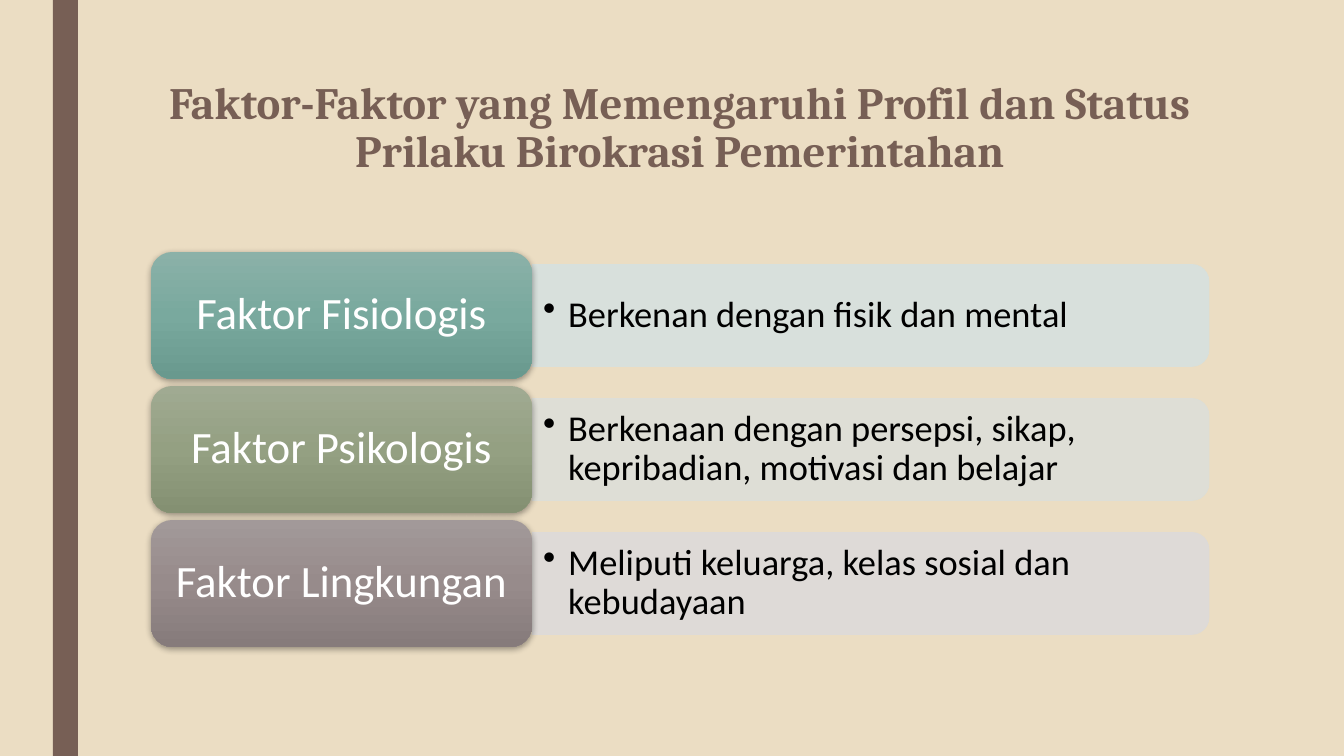
from copy import deepcopy

from lxml import etree
from pptx import Presentation
from pptx import util as u
from pptx.dml.color import RGBColor
from pptx.enum import shapes, text
from pptx.oxml.ns import qn

PX = 914400 / 100.8
COLOURS = {"background": "EBDDC3", "brown": "775F55", "black": "000000", "white": "FFFFFF"}
FACTORS = [
    ("Faktor Fisiologis", "Berkenan dengan fisik dan mental",
     ("8BB1A8", "79A99E", "69998E"), "D7E1DF"),
    ("Faktor Psikologis", "Berkenaan dengan persepsi, sikap, kepribadian, motivasi dan belajar",
     ("A0AA92", "94A082", "849072"), "DDDFD9"),
    ("Faktor Lingkungan", "Meliputi keluarga, kelas sosial dan kebudayaan",
     ("A29999", "978B8B", "867B7B"), "DDDADA"),
]
LEFT, TOP, PITCH = 151, 252, 134
LABEL_WIDTH, LABEL_HEIGHT = 381, 127
PANEL_WIDTH, PANEL_HEIGHT = 677, 102


def px(*lengths):
    return [u.Emu(round(length * PX)) for length in lengths]


def rgb(colour):
    return RGBColor.from_string(colour)


def add_plain_shape(slide, preset, box, colour):
    shape = slide.shapes.add_shape(preset, *px(*box))
    shape.shadow.inherit = False
    shape.fill.solid()
    shape.fill.fore_color.rgb = rgb(colour)
    shape.line.fill.background()
    return shape


def write(frame, words, font, size, colour, spacing, margins, bold=False):
    frame.word_wrap = True
    frame.auto_size = text.MSO_AUTO_SIZE.NONE
    frame.margin_left, frame.margin_top = px(*margins)
    frame.margin_right, frame.margin_bottom = px(*margins)
    frame.text = words
    paragraph = frame.paragraphs[0]
    paragraph.line_spacing = spacing
    paragraph.font.name = font
    paragraph.font.size = u.Pt(size)
    paragraph.font.bold = bold
    paragraph.font.color.rgb = rgb(colour)
    return paragraph


def set_title(slide, words):
    title = slide.shapes.title
    title.left, title.top, title.width, title.height = px(LEFT, 76, 1058, 163)
    title.text_frame.vertical_anchor = text.MSO_ANCHOR.TOP
    heading = write(title.text_frame, words, "Cambria", 32, COLOURS["brown"], 0.89, (10, 5), True)
    heading.alignment = text.PP_ALIGN.CENTER


def add_panel(slide, left, middle, colour):
    box = (left + (PANEL_WIDTH - PANEL_HEIGHT) / 2, middle - PANEL_WIDTH / 2,
           PANEL_HEIGHT, PANEL_WIDTH)
    panel = add_plain_shape(slide, shapes.MSO_SHAPE.ROUND_2_SAME_RECTANGLE, box, colour)
    panel.rotation = 90
    panel.line.color.rgb = rgb(colour)
    panel.line.width = u.Pt(0.5)
    for paint in panel._element.spPr.iter(qn("a:srgbClr")):
        etree.SubElement(paint, qn("a:alpha"), val="90000")


def add_description(slide, left, middle, words):
    description = slide.shapes.add_textbox(*px(left, middle - 46, 672, 92))
    frame = description.text_frame
    frame.vertical_anchor = text.MSO_ANCHOR.MIDDLE
    paragraph = write(frame, words, "Calibri", 26, COLOURS["black"], 0.9, (11, 5))
    properties = paragraph._p.get_or_add_pPr()
    indent = u.Inches(0.25)
    properties.set("marL", str(indent))
    properties.set("indent", str(-indent))
    bullet = etree.Element(qn("a:buChar"), char="•")
    properties.find(qn("a:lnSpc")).addnext(bullet)


def add_label(slide, left, top, words, gradient):
    label = add_plain_shape(slide, shapes.MSO_SHAPE.ROUNDED_RECTANGLE,
                            (left, top, LABEL_WIDTH, LABEL_HEIGHT), gradient[0])
    label.fill.gradient()
    label.fill.gradient_angle = 270
    properties = label._element.spPr
    stops = properties.find(".//" + qn("a:gsLst"))
    stops.insert(1, deepcopy(stops[0]))
    for stop, position, colour in zip(label.fill.gradient_stops, (0, 0.5, 1), gradient):
        stop.position = position
        stop.color.rgb = rgb(colour)
    shadow = etree.SubElement(properties.find(qn("a:effectLst")), qn("a:outerShdw"),
                              blurRad=str(u.Pt(4.5)), dist=str(u.Pt(1.5)),
                              dir="5400000", rotWithShape="0")
    paint = etree.SubElement(shadow, qn("a:srgbClr"), val=COLOURS["black"])
    etree.SubElement(paint, qn("a:alpha"), val="35000")
    label.text_frame.vertical_anchor = text.MSO_ANCHOR.MIDDLE
    name = write(label.text_frame, words, "Calibri", 32, COLOURS["white"], 0.9, (13, 7))
    name.alignment = text.PP_ALIGN.CENTER


def main():
    """Build the slide on factors of bureaucratic behaviour."""
    deck = Presentation()
    deck.slide_width, deck.slide_height = px(1344, 756)
    slide = deck.slides.add_slide(deck.slide_layouts[5])
    slide.background.fill.solid()
    slide.background.fill.fore_color.rgb = rgb(COLOURS["background"])
    add_plain_shape(slide, shapes.MSO_SHAPE.RECTANGLE, (53, 0, 25, 756), COLOURS["brown"])
    set_title(slide, "Faktor-Faktor yang Memengaruhi Profil dan Status "
                     "Prilaku Birokrasi Pemerintahan")
    for row, (name, description, gradient, tint) in enumerate(FACTORS):
        top = TOP + row * PITCH
        middle = top + LABEL_HEIGHT / 2
        panel_left = LEFT + LABEL_WIDTH
        add_panel(slide, panel_left, middle, tint)
        add_description(slide, panel_left, middle, description)
        add_label(slide, LEFT, top, name, gradient)
    deck.save("out.pptx")


if __name__ == "__main__":
    main()
